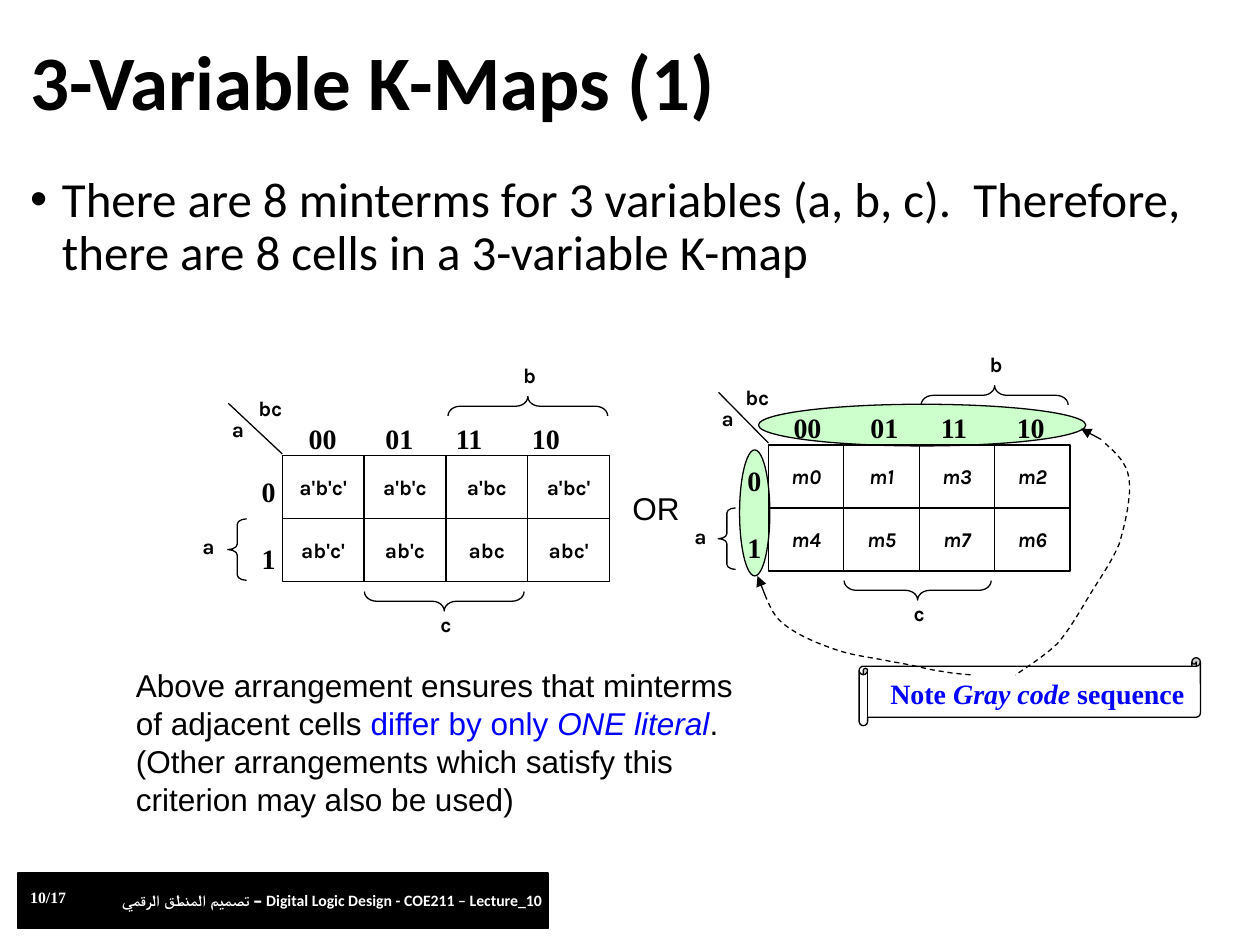
from lxml import etree
from pptx import Presentation
from pptx.dml.color import RGBColor
from pptx.enum.dml import MSO_LINE
from pptx.enum.shapes import MSO_CONNECTOR, MSO_SHAPE
from pptx.enum.text import MSO_ANCHOR, PP_ALIGN
from pptx.oxml.ns import qn
from pptx.util import Cm, Pt

BLACK = RGBColor(0x00, 0x00, 0x00)
WHITE = RGBColor(0xFF, 0xFF, 0xFF)
BLUE = RGBColor(0x00, 0x00, 0xFF)
PALE_GREEN = RGBColor(0xCC, 0xFF, 0xCC)

SERIF, SANS, HEADING, CELL = "Times New Roman", "Arial", "Calibri", "Karla"
LEFT, CENTER, RIGHT = PP_ALIGN.LEFT, PP_ALIGN.CENTER, PP_ALIGN.RIGHT
MIDDLE = MSO_ANCHOR.MIDDLE
STRAIGHT = MSO_CONNECTOR.STRAIGHT
DASH = MSO_LINE.DASH
RECTANGLE, OVAL = MSO_SHAPE.RECTANGLE, MSO_SHAPE.OVAL
BRACE, SCROLL = MSO_SHAPE.LEFT_BRACE, MSO_SHAPE.HORIZONTAL_SCROLL

ROW_HEIGHT = 1.27
COLUMN_TABS = (1.55, 2.97, 4.5)
MINTERMS = (("a'b'c'", "a'b'c", "a'bc", "a'bc'"),
            ("ab'c'", "ab'c", "abc", "abc'"))
MINTERM_NUMBERS = (("m0", "m1", "m3", "m2"), ("m4", "m5", "m7", "m6"))

# Each curve is a start point followed by triples of Bezier points, in cm.
COLUMN_CURVE = (
    (22.28, 8.94), (22.5, 9.14), (22.71, 9.32), (22.76, 9.65),
    (22.81, 10.01), (22.68, 10.57), (22.56, 10.97),
    (22.4, 11.35), (22.17, 11.66), (21.97, 11.99),
    (21.77, 12.32), (21.56, 12.7), (21.31, 12.98),
    (21.06, 13.23), (20.6, 13.51), (20.47, 13.61))
ROW_CURVE = (
    (15.42, 11.99), (15.52, 12.22), (15.6, 12.45), (15.85, 12.62),
    (16.08, 12.8), (16.54, 13), (16.89, 13.11),
    (17.25, 13.23), (17.63, 13.26), (17.98, 13.34),
    (18.34, 13.39), (18.75, 13.51), (19.02, 13.54),
    (19.28, 13.59), (19.46, 13.59), (19.61, 13.61))


def add_span(para, text, font, size, color=BLACK, bold=False, italic=False):
    span = para.add_run()
    span.text = text
    span.font.name = font
    span.font.size = Pt(size)
    span.font.color.rgb = color
    span.font.bold = bold
    span.font.italic = italic


def add_box(page, left, top, width, height, wrap=True):
    """Add an empty text box and return its text frame."""
    box = page.shapes.add_textbox(Cm(left), Cm(top), Cm(width), Cm(height))
    box.text_frame.word_wrap = wrap
    return box.text_frame


def add_label(page, place, text, font, size, align=LEFT, wrap=True, **style):
    """Add a box with one run and return its paragraph."""
    para = add_box(page, *place, wrap=wrap).paragraphs[0]
    para.alignment = align
    add_span(para, text, font, size, **style)
    return para


def add_outlined(page, kind, left, top, width, height, fill=None, line=0.75):
    shape = page.shapes.add_shape(kind, Cm(left), Cm(top), Cm(width), Cm(height))
    shape.shadow.inherit = False
    if fill is None:
        shape.fill.background()
    else:
        shape.fill.solid()
        shape.fill.fore_color.rgb = fill
    shape.line.color.rgb = BLACK
    shape.line.width = Pt(line)
    return shape


def add_brace(page, center_x, center_y, width, height, curl, rotation=0):
    brace = add_outlined(page, BRACE, center_x - width / 2,
                         center_y - height / 2, width, height)
    brace.adjustments[0] = curl
    brace.rotation = rotation


def add_line(page, start, end, arrow=False):
    line = page.shapes.add_connector(STRAIGHT, *map(Cm, start + end))
    line.line.color.rgb = BLACK
    line.line.width = Pt(0.75)
    if arrow:
        etree.SubElement(line.line._get_or_add_ln(), qn("a:tailEnd"), type="triangle")
    etree.SubElement(line._element.spPr, qn("a:effectLst"))


def add_dashed_curve(page, points, steps=8):
    """Draw joined cubic Bezier curves as short segments."""
    track = []
    for first in range(0, len(points) - 1, 3):
        curve = points[first:first + 4]
        for step in range(1, steps + 1):
            t = step / steps
            weights = ((1 - t) ** 3, 3 * t * (1 - t) ** 2, 3 * t * t * (1 - t), t ** 3)
            track.append(tuple(Cm(sum(w * p[axis] for w, p in zip(weights, curve)))
                               for axis in (0, 1)))
    builder = page.shapes.build_freeform(*map(Cm, points[0]))
    builder.add_line_segments(track, close=False)
    shape = builder.convert_to_shape()
    shape.shadow.inherit = False
    shape.fill.background()
    shape.line.color.rgb = BLACK
    shape.line.width = Pt(0.75)
    shape.line.dash_style = DASH


def add_codes(page, left, top, cell):
    """Add the Gray codes of the columns and the rows."""
    para = add_label(page, (left + 0.17 * cell, top - 0.81, 3.73 * cell, 1.02),
                     "00\t01\t11\t10", SERIF, 16, bold=True)
    tabs = etree.SubElement(para._p.get_or_add_pPr(), qn("a:tabLst"))
    for stop in COLUMN_TABS:
        etree.SubElement(tabs, qn("a:tab"), pos=str(Cm(stop)), algn="l")
    frame = add_box(page, left - 0.5 * cell, top + 0.25, 0.57 * cell, 2.16)
    for code, gap in (("0", 0), ("1", 19)):
        para = frame.add_paragraph() if gap else frame.paragraphs[0]
        para.alignment = RIGHT
        para.space_before = Pt(gap)
        add_span(para, code, SERIF, 16, bold=True)


def add_map(page, left, top, cell, rows, italic=False):
    """Draw a K-map; its widths follow the width of a cell."""
    height = len(rows) * ROW_HEIGHT
    add_outlined(page, RECTANGLE, left, top, 4 * cell, height)
    add_line(page, (left, top + ROW_HEIGHT), (left + 4 * cell, top + ROW_HEIGHT))
    for column in range(1, 4):
        x = left + column * cell
        add_line(page, (x, top), (x, top + height))
    for row, terms in enumerate(rows):
        for column, term in enumerate(terms):
            place = (left + column * cell, top + row * ROW_HEIGHT + 0.25, cell, 1.02)
            add_label(page, place, term, CELL, 12, CENTER, bold=True, italic=italic)
    add_codes(page, left, top, cell)

    add_line(page, (left, top - 0.04), (left - 0.66 * cell, top - 1.06))
    for name, across, down, width in (("a", -1.27, 1.45, 0.74), ("b", 2.65, -2, 0.74),
                                      ("c", 1.63, 3.02, 0.74), ("a", -0.91, -0.91, 0.74),
                                      ("bc", -0.58, -1.35, 0.87)):
        place = (left + across * cell, top + down, width * cell, 0.9)
        add_label(page, place, name, CELL, 12, CENTER, bold=True)
    add_brace(page, left - 0.55 * cell, top + 1.89, 0.23 * cell, 1.24, 0.29)
    add_brace(page, left + 3 * cell, top - 1, 0.39, 1.95 * cell, 0.63, 90)
    add_brace(page, left + 1.98 * cell, top + 2.93, 0.39, 1.95 * cell, 0.63, 270)


def add_footer(page):
    add_outlined(page, RECTANGLE, 0.36, 17.6, 10.69, 1.12, BLACK, 1)
    add_label(page, (0.36, 17.78, 1.3, 0.64), "10/17", SERIF, 9, wrap=False,
              color=WHITE, bold=True)
    add_label(page, (2.21, 17.83, 9.45, 0.64),
              "تصميم المنطق الرقمي – Digital Logic Design - COE211 – Lecture_10",
              HEADING, 9, color=WHITE, bold=True)


def add_headings(page):
    frame = add_box(page, 0.36, 0.64, 24.74, 2.16)
    frame.vertical_anchor = MIDDLE
    title = frame.paragraphs[0]
    title.line_spacing = 0.9
    add_span(title, "3-Variable K-Maps (1)", HEADING, 44, bold=True)

    point = add_label(page, (0.36, 3.4, 24.74, 13.74),
                      "There are 8 minterms for 3 variables (a, b, c).  Therefore, "
                      "there are 8 cells in a 3-variable K-map", HEADING, 28)
    point.line_spacing = 0.9
    point.space_before = Pt(10)
    properties = point._p.get_or_add_pPr()
    properties.set("marL", str(Cm(0.64)))
    properties.set("indent", str(-Cm(0.64)))
    etree.SubElement(properties, qn("a:buFont"), typeface=SANS)
    etree.SubElement(properties, qn("a:buChar"), char="•")


def add_gray_code_note(page):
    scroll = add_outlined(page, SCROLL, 17.32, 13.26, 6.88, 1.37, WHITE)
    scroll.adjustments[0] = 0.125
    note = add_label(page, (17.7, 13.51, 6.6, 1.02), "Note ", SERIF, 16,
                     color=BLUE, bold=True)
    add_span(note, "Gray code", SERIF, 16, BLUE, True, True)
    add_span(note, " sequence", SERIF, 16, BLUE, True)
    add_line(page, (15.42, 11.99), (15.27, 11.61), arrow=True)
    add_line(page, (22.2, 8.86), (21.79, 8.64), arrow=True)
    add_dashed_curve(page, COLUMN_CURVE)
    add_dashed_curve(page, ROW_CURVE)


def add_remark(page):
    remark = add_label(page, (2.49, 13.31, 12.9, 3.81),
                       "Above arrangement ensures that minterms of adjacent cells ", SANS, 18)
    add_span(remark, "differ by only ", SANS, 18, BLUE)
    add_span(remark, "ONE literal", SANS, 18, BLUE, italic=True)
    add_span(remark, ".  (Other arrangements which satisfy this criterion "
                     "may also be used)", SANS, 18)


def main():
    deck = Presentation()
    deck.slide_width, deck.slide_height = Cm(25.4), Cm(19.05)
    page = deck.slides.add_slide(deck.slide_layouts[6])
    add_footer(page)
    add_headings(page)
    add_map(page, 5.69, 9.19, 1.65, MINTERMS)
    add_label(page, (12.5, 9.73, 1.47, 1.09), "OR", SANS, 18)
    add_outlined(page, OVAL, 14.91, 9.07, 0.61, 2.54, PALE_GREEN)
    add_outlined(page, OVAL, 15.29, 8.15, 6.6, 0.84, PALE_GREEN)
    add_map(page, 15.49, 8.97, 1.52, MINTERM_NUMBERS, italic=True)
    add_gray_code_note(page)
    add_remark(page)
    deck.save("out.pptx")


if __name__ == "__main__":
    main()
